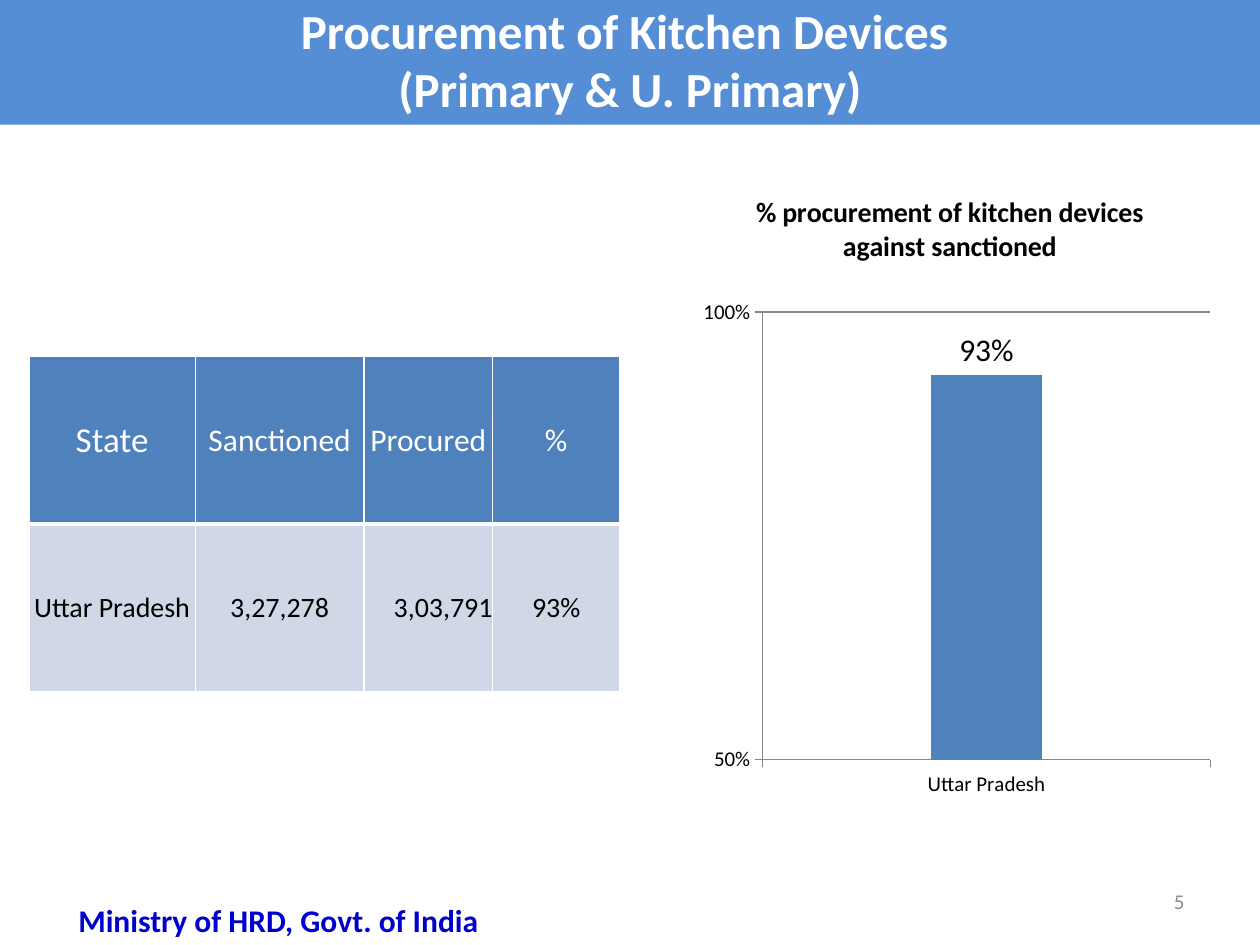
from lxml import etree
from pptx import Presentation
from pptx.chart.data import CategoryChartData
from pptx.dml.color import RGBColor
from pptx.enum.chart import XL_CHART_TYPE as CT, XL_LABEL_POSITION as LP, XL_TICK_MARK as TM
from pptx.enum.shapes import MSO_SHAPE
from pptx.enum.text import MSO_ANCHOR, PP_ALIGN
from pptx.oxml.ns import qn
from pptx.util import Inches, Pt

W, H = 10, 7.5
BLUE, WHITE, BLACK, GREY = "4F81BD", "FFFFFF", "000000", "878787"
L, C, R = PP_ALIGN.LEFT, PP_ALIGN.CENTER, PP_ALIGN.RIGHT

TITLE = ["Procurement of Kitchen Devices ", "(Primary & U. Primary)"]
FOOTERS = [  # text, box, alignment, anchor, font
    ("5", (7.17, 6.95, 2.33, 0.4), R, MSO_ANCHOR.MIDDLE, dict(size=12, color="8C8C8C")),
    ("Ministry of HRD, Govt. of India", (0.25, 7.1, 3.92, 0.4), C, MSO_ANCHOR.TOP,
     dict(size=18, color="0000CC", bold=True)),
]
TABLE_BOX = (0.23, 2.83, 4.69, 2.66)
COL_WIDTHS = [1.32, 1.34, 1.02, 1.01]
ROWS = [  # fill, text colour, bottom border, cells of (text, size, alignment)
    (BLUE, WHITE, 3, [("State", 20, C), ("Sanctioned", 18, C), ("Procured", 18, C), ("%", 18, C)]),
    ("D0D8E8", BLACK, 1, [("Uttar Pradesh", 16, C), ("3,27,278", 16, C),
                          ("3,03,791", 16, R), ("93%", 16, C)]),
]
CHART_BOX = (5.47, 1.33, 4.14, 5.31)
CHART_TITLE = "% procurement of kitchen devices against sanctioned"
PROCURED = {"Uttar Pradesh": 0.93}
PLOT = dict(x=0.141, y=0.216, w=0.859, h=0.669)


def rgb(color):
    return RGBColor.from_string(color)


def inches(box):
    return [Inches(v) for v in box]


def style(font, size, color=BLACK, bold=False):
    font.name, font.size, font.bold = "Calibri", Pt(size), bold
    font.color.rgb = rgb(color)


def write(p, text, align, **font):
    p.alignment = align
    r = p.add_run()
    r.text = text
    style(r.font, **font)


def add_border(cell, side, width):
    ln = etree.SubElement(cell._tc.get_or_add_tcPr(), qn("a:ln" + side), w=str(Pt(width)))
    fill = etree.SubElement(ln, qn("a:solidFill"))
    etree.SubElement(fill, qn("a:srgbClr"), val=WHITE)


def add_title(s):
    sp = s.shapes.add_shape(MSO_SHAPE.RECTANGLE, *inches((0, -0.24, W, 1.23)))
    sp.shadow.inherit = False
    sp.fill.solid()
    sp.fill.fore_color.rgb = rgb("558ED5")
    sp.line.fill.background()
    tf = sp.text_frame
    tf.vertical_anchor = MSO_ANCHOR.MIDDLE
    for i, text in enumerate(TITLE):
        p = tf.add_paragraph() if i else tf.paragraphs[0]
        write(p, text, C, size=28, color=WHITE, bold=True)
    tf.paragraphs[0].line_spacing = 1.4


def add_table(s):
    table = s.shapes.add_table(len(ROWS), len(COL_WIDTHS), *inches(TABLE_BOX)).table
    for col, width in zip(table.columns, COL_WIDTHS):
        col.width = Inches(width)
    for i, (fill, color, bottom, cells) in enumerate(ROWS):
        top = ROWS[i - 1][2] if i else 1
        for j, (text, size, align) in enumerate(cells):
            cell = table.cell(i, j)
            cell.margin_left = cell.margin_right = cell.margin_top = cell.margin_bottom = 0
            cell.vertical_anchor = MSO_ANCHOR.MIDDLE
            for side, width in dict(L=1, R=1, T=top, B=bottom).items():
                add_border(cell, side, width)
            cell.fill.solid()
            cell.fill.fore_color.rgb = rgb(fill)
            write(cell.text_frame.paragraphs[0], text, align, size=size, color=color)


def place_plot(chart):
    """Fix the inner plot area at PLOT, as shares of the chart."""
    area = chart._chartSpace.chart.plotArea
    for old in area.findall(qn("c:layout")):
        area.remove(old)
    layout = etree.Element(qn("c:layout"))
    area.insert(0, layout)
    manual = etree.SubElement(layout, qn("c:manualLayout"))
    values = dict(layoutTarget="inner", xMode="edge", yMode="edge", **PLOT)
    for tag, value in values.items():
        etree.SubElement(manual, qn("c:" + tag), val=str(value))


def add_chart(s):
    data = CategoryChartData(number_format="0%")
    data.categories = list(PROCURED)
    data.add_series("Series 1", list(PROCURED.values()))
    chart = s.shapes.add_chart(CT.COLUMN_CLUSTERED, *inches(CHART_BOX), data).chart
    style(chart.font, 18)
    chart.has_legend = False
    chart.has_title = True
    write(chart.chart_title.text_frame.paragraphs[0], CHART_TITLE, C, size=16, bold=True)
    chart.chart_title.include_in_layout = False
    place_plot(chart)

    value_axis = chart.value_axis
    scale = dict(minimum_scale=0.5, maximum_scale=1, major_unit=0.5, has_major_gridlines=True)
    for name, value in scale.items():
        setattr(value_axis, name, value)
    value_axis.tick_labels.number_format = "0%"
    value_axis.tick_labels.number_format_is_linked = False
    for axis in (chart.category_axis, value_axis):
        axis.major_tick_mark = TM.OUTSIDE
        axis.format.line.color.rgb = rgb(GREY)
        style(axis.tick_labels.font, 12)
    value_axis.major_gridlines.format.line.color.rgb = rgb(GREY)

    plot = chart.plots[0]
    plot.gap_width, plot.vary_by_categories = 306, False
    fill = plot.series[0].format.fill
    fill.solid()
    fill.fore_color.rgb = rgb(BLUE)
    plot.has_data_labels = True
    labels = plot.data_labels
    settings = dict(show_value=True, number_format="0%", number_format_is_linked=False,
                    position=LP.OUTSIDE_END)
    for name, value in settings.items():
        setattr(labels, name, value)
    style(labels.font, 18)


def add_footers(s):
    for text, box, align, anchor, font in FOOTERS:
        tf = s.shapes.add_textbox(*inches(box)).text_frame
        tf.word_wrap = True
        tf.vertical_anchor = anchor
        write(tf.paragraphs[0], text, align, **font)


def main():
    prs = Presentation()
    prs.slide_width, prs.slide_height = inches((W, H))
    s = prs.slides.add_slide(prs.slide_layouts[6])
    for add in (add_title, add_table, add_chart, add_footers):
        add(s)
    prs.save("out.pptx")


if __name__ == "__main__":
    main()
